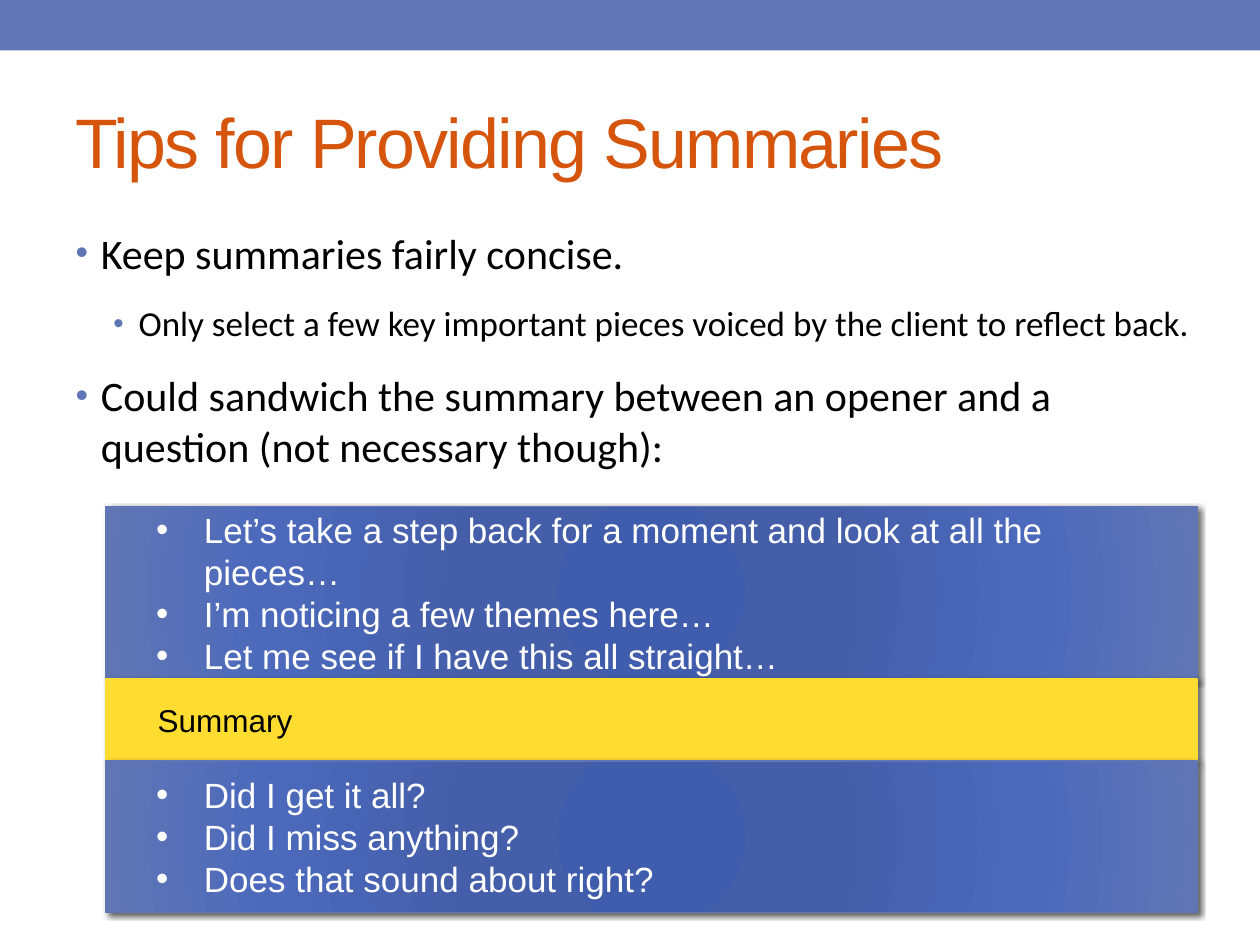
import pptx
import pptx.dml.color
import pptx.enum.shapes
import pptx.enum.text
import pptx.oxml
import pptx.oxml.ns
import pptx.util
from pptx.util import Cm

COLOURS = {
    "accent": "6076B4",
    "title": "D6550D",
    "filling": "FFDC30",
    "black": "000000",
    "white": "FFFFFF",
}
GRADIENT = [(0, "405CAC"), (34, "445EA9"), (70, "4C69BC"), (100, "6076B4")]
TIPS = [
    (0, "Keep summaries fairly concise."),
    (1, "Only select a few key important pieces voiced by the client to reflect back."),
    (0, "Could sandwich the summary between an opener and a question (not necessary though):"),
]
OPENERS = [
    "Let’s take a step back for a moment and look at all the pieces…",
    "I’m noticing a few themes here…",
    "Let me see if I have this all straight…",
]
QUESTIONS = ["Did I get it all?", "Did I miss anything?", "Does that sound about right?"]


def rgb(name):
    return pptx.dml.color.RGBColor.from_string(COLOURS[name])


def drawing_xml(markup):
    """Parse one DrawingML element whose opening tag has no namespace yet."""
    head, rest = markup.split(">", 1)
    slash = "/" if head.endswith("/") else ""
    head = head.rstrip("/")
    return pptx.oxml.parse_xml(f"{head} {pptx.oxml.ns.nsdecls('a')}{slash}>{rest}")


def write(para, text, *, font="Arial", size=20, colour="black", tracking=0,
          bullet=False, bullet_colour=None, bullet_size=100, left=0, hanging=0,
          before=0, after=0, level=0):
    span = para.add_run()
    span.text = text
    span.font.name = font
    span.font.size = pptx.util.Pt(size)
    span.font.color.rgb = rgb(colour)
    if tracking:
        span.font._element.set("spc", str(tracking * 100))
    para.level = level
    para.alignment = pptx.enum.text.PP_ALIGN.LEFT
    para.space_before = pptx.util.Pt(before)
    para.space_after = pptx.util.Pt(after)
    properties = para._p.get_or_add_pPr()
    properties.set("marL", str(Cm(left)))
    properties.set("indent", str(-Cm(hanging)))
    if bullet:
        dot_colour = COLOURS[bullet_colour or colour]
        for markup in (
            f'<a:buClr><a:srgbClr val="{dot_colour}"/></a:buClr>',
            f'<a:buSzPct val="{bullet_size * 1000}"/>',
            '<a:buFont typeface="Arial"/>',
            '<a:buChar char="•"/>',
        ):
            properties.append(drawing_xml(markup))


def paragraphs(frame, count):
    return [frame.paragraphs[0]] + [frame.add_paragraph() for _ in range(count - 1)]


def fill_radially(shape):
    shape.fill.background()
    stops = "".join(
        f'<a:gs pos="{place * 1000}"><a:srgbClr val="{colour}"/></a:gs>'
        for place, colour in GRADIENT
    )
    edges = " ".join(f'{side}="100000"' for side in "ltrb")
    gradient = drawing_xml(
        f'<a:gradFill><a:gsLst>{stops}</a:gsLst><a:path path="circle">'
        f'<a:fillToRect {edges}/></a:path></a:gradFill>'
    )
    properties = shape._element.spPr
    properties.replace(properties.find(pptx.oxml.ns.qn("a:noFill")), gradient)


def cast_shadow(shape):
    effects = shape._element.spPr.find(pptx.oxml.ns.qn("a:effectLst"))
    effects.append(drawing_xml(
        f'<a:outerShdw blurRad="{pptx.util.Pt(3)}" dist="{pptx.util.Pt(2)}" dir="2700000" '
        f'rotWithShape="0"><a:srgbClr val="{COLOURS["black"]}">'
        '<a:alpha val="60000"/></a:srgbClr></a:outerShdw>'
    ))


class Composer:
    """Holds the style and the page being filled."""

    body_font = "Calibri"
    body_sizes = (24, 20)
    body_indents = (0.51, 1.27)

    def __init__(self, deck):
        self.page = deck.slides.add_slide(deck.slide_layouts[1])

    def place(self, shape, left, top, width, height):
        shape.left, shape.top = Cm(left), Cm(top)
        shape.width, shape.height = Cm(width), Cm(height)

    def rectangle(self, shapes, left, top, width, height, colour):
        box = shapes.add_shape(pptx.enum.shapes.MSO_SHAPE.RECTANGLE,
                               Cm(left), Cm(top), Cm(width), Cm(height))
        box.shadow.inherit = False
        box.fill.solid()
        box.fill.fore_color.rgb = rgb(colour)
        box.line.fill.background()
        return box

    def title(self, text):
        box = self.page.shapes.title
        self.place(box, 1.27, 1.47, 22.86, 2.74)
        box.text_frame.auto_size = pptx.enum.text.MSO_AUTO_SIZE.NONE
        box.text_frame.vertical_anchor = pptx.enum.text.MSO_ANCHOR.MIDDLE
        write(box.text_frame.paragraphs[0], text, size=40, colour="title", tracking=-1)

    def body(self, items):
        box = self.page.placeholders[1]
        self.place(box, 1.27, 4.45, 23.34, 13.54)
        box.text_frame.auto_size = pptx.enum.text.MSO_AUTO_SIZE.NONE
        for para, (level, text) in zip(paragraphs(box.text_frame, len(items)), items):
            size = self.body_sizes[level]
            write(para, text, font=self.body_font, size=size, level=level,
                  left=self.body_indents[level], hanging=0.51, before=size * 0.2, after=10,
                  bullet=True, bullet_colour="accent", bullet_size=85)

    def layer(self, group, top, height, lines, *, base, radial=False, **text_format):
        box = self.rectangle(group.shapes, 2.13, top, 22, height, base)
        if radial:
            fill_radially(box)
        box.line.color.rgb = rgb(base)
        box.line.width = pptx.util.Pt(0.75)
        cast_shadow(box)
        frame = box.text_frame
        frame.word_wrap = True
        frame.margin_right = Cm(0.5)
        frame.vertical_anchor = pptx.enum.text.MSO_ANCHOR.MIDDLE
        for para, text in zip(paragraphs(frame, len(lines)), lines):
            write(para, text, **text_format)

    def sandwich(self):
        group = self.page.shapes.add_group_shape()
        bread = dict(base="accent", radial=True, colour="white", level=1,
                     left=1.73, hanging=0.96, bullet=True)
        filling = dict(base="filling", size=18, left=0.8)
        top = 10.21
        for height, lines, look in (
            (3.48, OPENERS, bread),
            (1.65, ["Summary"], filling),
            (3.05, QUESTIONS, bread),
        ):
            self.layer(group, top, height, lines, **look)
            top += height


def main():
    deck = pptx.Presentation()
    deck.slide_width, deck.slide_height = Cm(25.4), Cm(19.05)
    composer = Composer(deck)
    composer.rectangle(composer.page.shapes, 0, 0, 25.4, 1.02, "accent")
    composer.title("Tips for Providing Summaries")
    composer.body(TIPS)
    composer.sandwich()
    deck.save("out.pptx")


if __name__ == "__main__":
    main()
